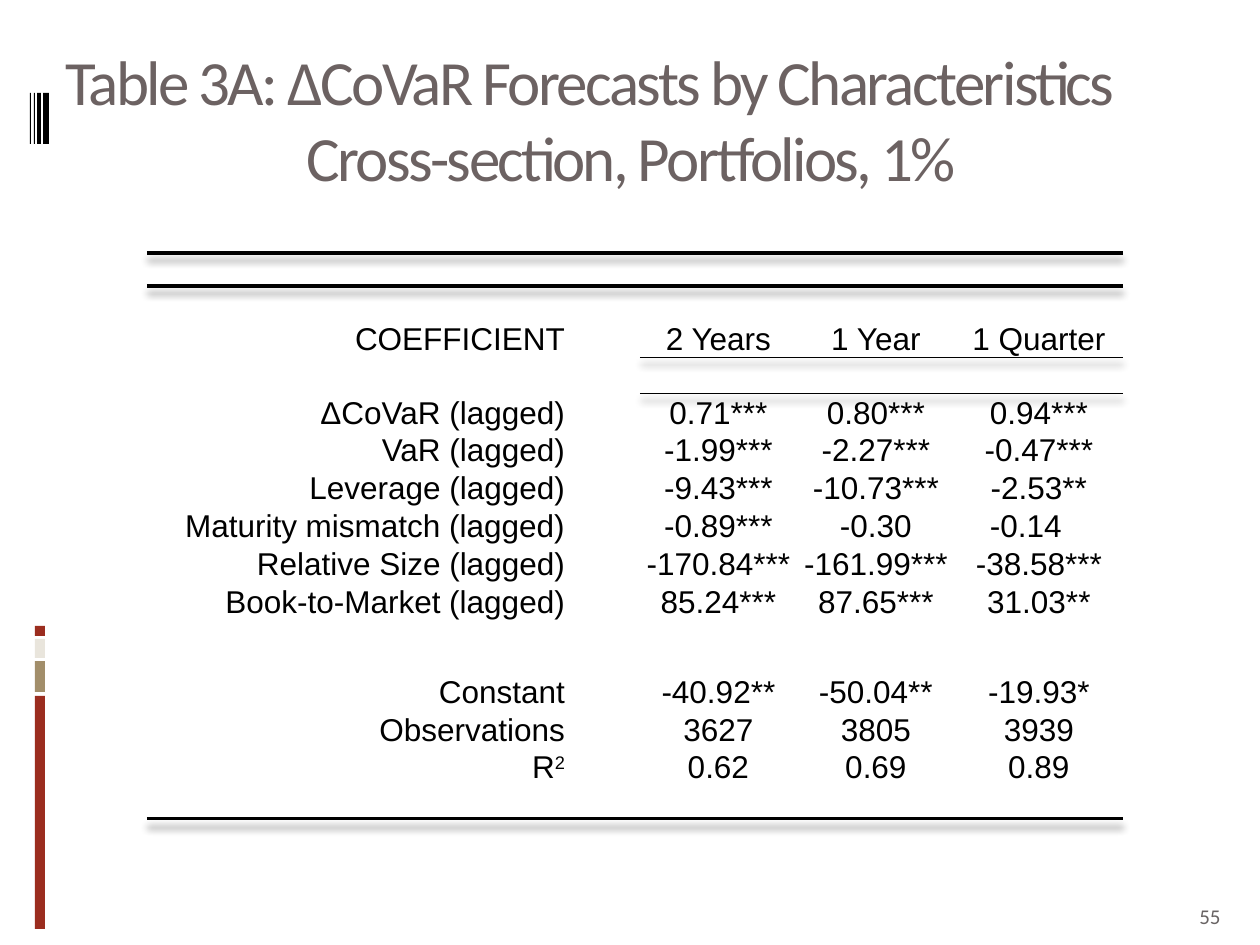
from dataclasses import dataclass
from typing import Optional

from lxml.etree import SubElement
from pptx import Presentation
from pptx.dml.color import RGBColor
from pptx.enum.shapes import MSO_SHAPE
from pptx.enum.text import MSO_ANCHOR, PP_ALIGN
from pptx.oxml import parse_xml
from pptx.oxml.ns import nsdecls, qn
from pptx.util import Emu, Pt

PX = 914400 // 126


@dataclass(frozen=True)
class Theme:
    title: str = "6C6262"
    number: str = "696464"
    ink: str = "000000"
    red: str = "9B2D1F"
    tan: str = "A28E6A"
    cream: str = "E9E5DC"
    heading_font: str = "Calibri"
    table_font: str = "Arial"
    title_size: int = 36
    table_size: int = 18
    number_size: int = 12
    empty_size: int = 8
    heavy: float = 2
    thin: float = 0.5


@dataclass(frozen=True)
class Bar:
    x: int
    y: int
    w: int
    h: int
    color: str


@dataclass(frozen=True)
class Row:
    h: int
    texts: tuple[str, ...] = ()
    rule: float = 0
    first_ruled: int = 0


T = Theme()

BARS = [
    Bar(35, 696, 10, 233, T.red),
    Bar(35, 661, 10, 31, T.tan),
    Bar(35, 639, 10, 19, T.cream),
    Bar(35, 626, 10, 10, T.red),
    *(Bar(x, 93, w, 51, T.ink) for x, w in ((43, 6), (37, 4), (34, 1), (30, 1))),
]

COLS = (418, 75, 157, 158, 168)
LINE = 36
EDGE = 33

ROWS = [
    Row(EDGE, rule=T.heavy),
    Row(EDGE),
    Row(71, ("COEFFICIENT", "", "2 Years", "1 Year", "1 Quarter"), T.thin, 2),
    Row(LINE),
    Row(LINE, ("ΔCoVaR (lagged)", "", "0.71***", "0.80***", "0.94***")),
    Row(LINE, ("VaR (lagged)", "", "-1.99***", "-2.27***", "-0.47***")),
    Row(LINE, ("Leverage (lagged)", "", "-9.43***", "-10.73***", "-2.53**")),
    Row(LINE, ("Maturity mismatch (lagged)", "", "-0.89***", "-0.30", "-0.14")),
    Row(LINE, ("Relative Size (lagged)", "", "-170.84***", "-161.99***", "-38.58***")),
    Row(LINE, ("Book-to-Market (lagged)", "", "85.24***", "87.65***", "31.03**")),
    Row(52),
    Row(LINE, ("Constant", "", "-40.92**", "-50.04**", "-19.93*")),
    Row(LINE, ("Observations", "", "3627", "3805", "3939")),
    Row(LINE, ("R", "", "0.62", "0.69", "0.89")),
    Row(EDGE, rule=T.heavy),
    Row(EDGE),
]


def px(n: int) -> Emu:
    return Emu(n * PX)


def write(p, text: str, *, size: int, font: str, color: str,
          align: Optional[PP_ALIGN] = None, spacing: int = 0,
          baseline: int = 0, indent: int = 0) -> None:
    if align is not None:
        p.alignment = align
    if indent:
        p_pr = p._p.get_or_add_pPr()
        p_pr.set("marL", str(px(indent)))
        p_pr.set("indent", "0")
    r = p.add_run()
    r.text = text
    r.font.size = Pt(size)
    r.font.name = font
    r.font.color.rgb = RGBColor.from_string(color)
    if spacing:
        r.font._element.set("spc", str(spacing))
    if baseline:
        r.font._element.set("baseline", str(baseline))


def add_bar(slide, bar: Bar) -> None:
    sp = slide.shapes.add_shape(MSO_SHAPE.RECTANGLE, px(bar.x), px(bar.y), px(bar.w), px(bar.h))
    sp.shadow.inherit = False
    sp.fill.solid()
    sp.fill.fore_color.rgb = RGBColor.from_string(bar.color)
    sp.line.fill.background()


def add_box(slide, x: int, y: int, w: int, h: int, anchor: MSO_ANCHOR):
    tf = slide.shapes.add_textbox(px(x), px(y), px(w), px(h)).text_frame
    tf.word_wrap = True
    tf.vertical_anchor = anchor
    return tf


def add_rule(cell, side: str, width: float) -> None:
    tc_pr = cell._tc.get_or_add_tcPr()
    ln = parse_xml(
        f'<a:{side} {nsdecls("a")} w="{Pt(width)}"><a:solidFill>'
        f'<a:srgbClr val="{T.ink}"/></a:solidFill></a:{side}>')
    tc_pr.insert(0, ln)


def add_shadow(table) -> None:
    effect = parse_xml(
        f'<a:effectLst {nsdecls("a")}><a:outerShdw blurRad="50800" dist="{px(8)}" '
        f'dir="5400000" rotWithShape="0"><a:srgbClr val="{T.ink}">'
        '<a:alpha val="45000"/></a:srgbClr></a:outerShdw></a:effectLst>')
    table._tbl.tblPr.insert(0, effect)


def fill_cell(cell, text: str, align: PP_ALIGN) -> None:
    cell.margin_left = cell.margin_right = cell.margin_top = cell.margin_bottom = 0
    cell.vertical_anchor = MSO_ANCHOR.BOTTOM
    cell.fill.background()
    p = cell.text_frame.paragraphs[0]
    style = dict(size=T.table_size, font=T.table_font, color=T.ink, align=align)
    if not text:
        SubElement(p._p, qn("a:endParaRPr")).set("sz", str(T.empty_size * 100))
        return
    write(p, text, **style)
    if text == "R":
        write(p, "2", baseline=30000, **style)
    if text == "-0.14":
        cell.margin_right = px(26)


def add_results(slide, x: int, y: int) -> None:
    height = sum(row.h for row in ROWS)
    table = slide.shapes.add_table(
        len(ROWS), len(COLS), px(x), px(y), px(sum(COLS)), px(height)).table
    table.first_row = table.horz_banding = False
    table._tbl.tblPr.find(qn("a:tableStyleId")).text = "{2D5ABB26-0587-4C30-8999-92F81FD0307C}"
    add_shadow(table)
    for col, w in zip(table.columns, COLS):
        col.width = px(w)
    for i, row in enumerate(ROWS):
        table.rows[i].height = px(row.h)
        for j in range(len(COLS)):
            align = PP_ALIGN.CENTER if j else PP_ALIGN.RIGHT
            fill_cell(table.cell(i, j), row.texts[j] if row.texts else "", align)
    for i, row in enumerate(ROWS):
        if row.rule:
            for j in range(row.first_ruled, len(COLS)):
                add_rule(table.cell(i, j), "lnB", row.rule)
                add_rule(table.cell(i + 1, j), "lnT", row.rule)


def main() -> None:
    prs = Presentation()
    prs.slide_width, prs.slide_height = px(1260), px(945)
    slide = prs.slides.add_slide(prs.slide_layouts[6])
    for bar in BARS:
        add_bar(slide, bar)

    tf = add_box(slide, 53, 29, 1207, 179, MSO_ANCHOR.MIDDLE)
    style = dict(size=T.title_size, font=T.heading_font, color=T.title, spacing=-150)
    write(tf.paragraphs[0], "Table 3A: ΔCoVaR Forecasts by Characteristics", **style)
    write(tf.add_paragraph(), "Cross-section, Portfolios, 1%", indent=241, **style)

    tf = add_box(slide, 1187, 885, 63, 50, MSO_ANCHOR.BOTTOM)
    write(tf.paragraphs[0], "55", size=T.number_size, font=T.heading_font, color=T.number)

    add_results(slide, 147, 220)
    prs.save("out.pptx")


if __name__ == "__main__":
    main()
